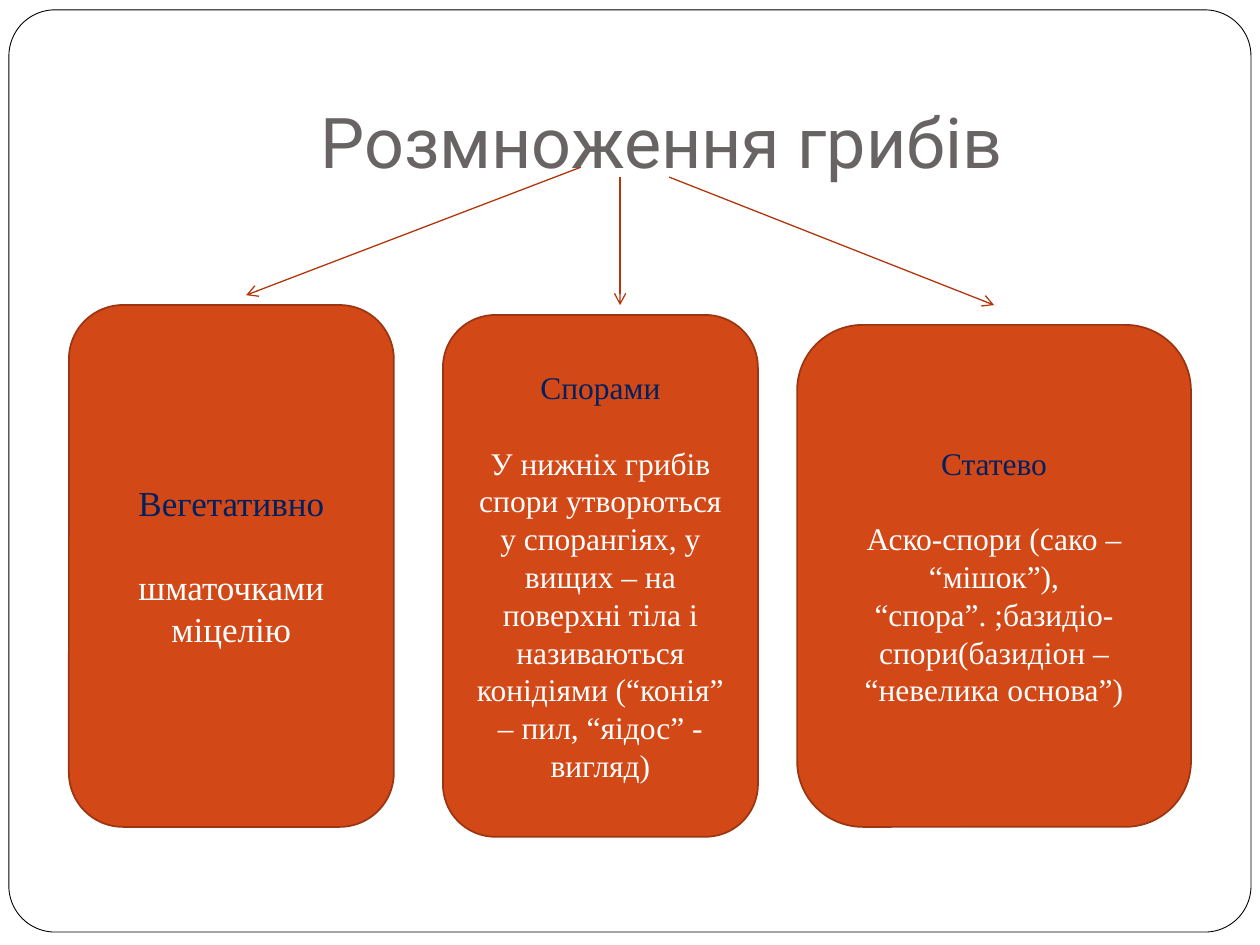
from dataclasses import dataclass

from lxml import etree
from pptx import Presentation
from pptx.dml.color import RGBColor
from pptx.enum.shapes import MSO_CONNECTOR, MSO_SHAPE
from pptx.enum.text import MSO_ANCHOR, PP_ALIGN
from pptx.oxml.ns import qn
from pptx.util import Cm, Pt

ROUND_RECT = MSO_SHAPE.ROUNDED_RECTANGLE
STRAIGHT = MSO_CONNECTOR.STRAIGHT
MIDDLE, BOTTOM = MSO_ANCHOR.MIDDLE, MSO_ANCHOR.BOTTOM
CENTER = PP_ALIGN.CENTER


@dataclass(frozen=True)
class Theme:
    paper: str = "FFFFFF"
    frame: str = "000000"
    title: str = "696464"
    card: str = "D34817"
    card_edge: str = "9C3511"
    heading: str = "002060"
    body: str = "FFFFFF"
    arrow: str = "B1360B"
    title_font: str = "Roboto"
    body_font: str = "Times New Roman"
    title_size: int = 40
    large_size: int = 20
    body_size: int = 18


THEME = Theme()

# left, top, width, height in cm; type size; heading; body
CARDS = [
    (1.39, 6.15, 6.55, 10.52, THEME.large_size, "Вегетативно",
     "шматочками міцелію"),
    (8.93, 6.35, 6.35, 10.52, THEME.body_size, "Спорами",
     "У нижніх грибів спори утворються у спорангіях, у вищих – на поверхні "
     "тіла і називаються конідіями (“конія” – пил, “яідос” - вигляд)"),
    (16.07, 6.55, 7.94, 10.12, THEME.body_size, "Статево",
     "Аско-спори (сако – “мішок”), “спора”. ;базидіо-спори(базидіон – "
     "“невелика основа”)"),
]

# start x, start y, end x, end y in cm
ARROWS = [
    (11.71, 3.37, 4.96, 5.95),
    (12.5, 3.57, 12.5, 6.15),
    (13.49, 3.57, 20.04, 6.15),
]


def rgb(value):
    return RGBColor.from_string(value)


def style_paragraph(p, font, size, color):
    p.alignment = CENTER
    for r in p.runs:
        r.font.name = font
        r.font.size = Pt(size)
        r.font.color.rgb = rgb(color)


def add_round_rect(s, box, fill, edge, edge_width):
    sp = s.shapes.add_shape(ROUND_RECT, *map(Cm, box))
    sp.shadow.inherit = False
    sp.fill.solid()
    sp.fill.fore_color.rgb = rgb(fill)
    sp.line.color.rgb = rgb(edge)
    sp.line.width = Pt(edge_width)
    return sp


def add_frame(s):
    sp = add_round_rect(s, (0.18, 0.2, 25.04, 18.59), THEME.paper, THEME.frame, 0.5)
    sp.adjustments[0] = 0.05


def add_title(s, text):
    sp = s.shapes.add_textbox(Cm(2.54), Cm(0.74), Cm(21.59), Cm(3.18))
    tf = sp.text_frame
    tf.word_wrap = True
    tf.vertical_anchor = BOTTOM
    tf.margin_bottom = Cm(0.25)
    tf.text = text
    style_paragraph(tf.paragraphs[0], THEME.title_font, THEME.title_size, THEME.title)


def add_card(s, box, size, heading, body):
    sp = add_round_rect(s, box, THEME.card, THEME.card_edge, 1)
    tf = sp.text_frame
    tf.word_wrap = True
    tf.vertical_anchor = MIDDLE
    tf.text = f"{heading}\n{body}"
    for p, color in zip(tf.paragraphs, (THEME.heading, THEME.body)):
        style_paragraph(p, THEME.body_font, size, color)
    tf.paragraphs[1].space_before = Pt(round(size * 1.2, 1))


def add_arrow(s, ends):
    line = s.shapes.add_connector(STRAIGHT, *map(Cm, ends))
    line.line.color.rgb = rgb(THEME.arrow)
    line.line.width = Pt(0.75)
    ln = line._element.spPr.find(qn("a:ln"))
    etree.SubElement(ln, qn("a:tailEnd"), type="arrow")
    etree.SubElement(line._element.spPr, qn("a:effectLst"))


def main():
    prs = Presentation()
    prs.slide_width, prs.slide_height = Cm(25.4), Cm(19.05)
    s = prs.slides.add_slide(prs.slide_layouts[6])
    add_frame(s)
    add_title(s, "Розмноження грибів")
    for *box, size, heading, body in CARDS:
        add_card(s, box, size, heading, body)
    for ends in ARROWS:
        add_arrow(s, ends)
    prs.save("out.pptx")


if __name__ == "__main__":
    main()
